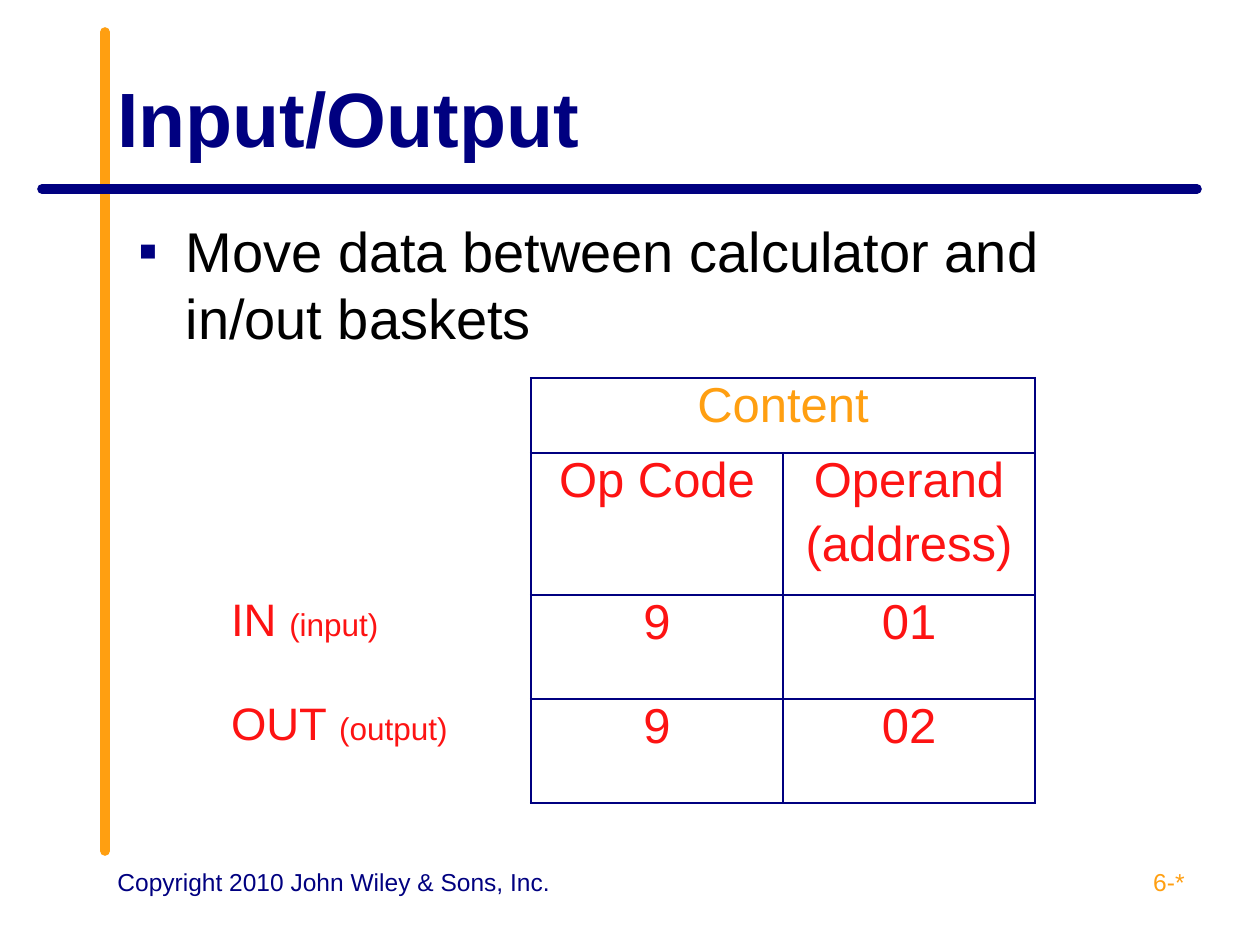
from lxml import etree
from pptx import Presentation, util as u
from pptx.dml.color import RGBColor
from pptx.enum import shapes, text
from pptx.oxml import ns

PX = 914400 / 126
NAVY = RGBColor(0x00, 0x00, 0x80)
ORANGE = RGBColor(0xFF, 0x9F, 0x11)
RED = RGBColor(0xFD, 0x13, 0x13)
BLACK = RGBColor(0x00, 0x00, 0x00)
WHITE = RGBColor(0xFF, 0xFF, 0xFF)
FONT = "Arial"


def emu(px):
    return u.Emu(round(px * PX))


def place(shape, box):
    shape.left, shape.top, shape.width, shape.height = map(emu, box)


def style(run, size, color, bold=False):
    run.font.name = FONT
    run.font.size = u.Pt(size)
    run.font.color.rgb = color
    run.font.bold = bold


def add_rule(slide, start, end, color):
    rule = slide.shapes.add_connector(
        shapes.MSO_CONNECTOR.STRAIGHT, *map(emu, start + end))
    rule.line.color.rgb = color
    rule.line.width = u.Pt(5.5)
    rule.line._get_or_add_ln().set("cap", "rnd")
    etree.SubElement(rule._element.spPr, ns.qn("a:effectLst"))


def add_footer(slide, box, wording, color, align):
    footer = slide.shapes.add_textbox(*map(emu, box))
    footer.text_frame.word_wrap = True
    footer.text_frame.text = wording
    paragraph = footer.text_frame.paragraphs[0]
    paragraph.alignment = align
    style(paragraph.runs[0], 14, color)


def fill_title(title, box, wording):
    place(title, box)
    frame = title.text_frame
    frame.text = wording
    frame.vertical_anchor = text.MSO_ANCHOR.MIDDLE
    frame.auto_size = text.MSO_AUTO_SIZE.NONE
    frame.paragraphs[0].alignment = text.PP_ALIGN.LEFT
    style(frame.paragraphs[0].runs[0], 44, NAVY, bold=True)


def fill_body(body, box, wording):
    place(body, box)
    frame = body.text_frame
    frame.text = wording
    frame.auto_size = text.MSO_AUTO_SIZE.NONE
    paragraph = frame.paragraphs[0]
    paragraph.space_before = u.Pt(0)
    props = paragraph._p.get_or_add_pPr()
    props.set("marL", str(emu(47)))
    props.set("indent", str(-emu(47)))
    bullet_color = etree.SubElement(props, ns.qn("a:buClr"))
    etree.SubElement(bullet_color, ns.qn("a:srgbClr"), val=str(NAVY))
    etree.SubElement(props, ns.qn("a:buFont"), typeface=FONT)
    etree.SubElement(props, ns.qn("a:buChar"), char="▪")
    style(paragraph.runs[0], 32, BLACK)


def set_borders(cell, colors):
    """Draw the left, right, top and bottom borders in the given colours."""
    props = cell._tc.get_or_add_tcPr()
    for index, (side, color) in enumerate(zip("LRTB", colors)):
        width = u.Pt(1.5 if color == NAVY else 1)
        line = etree.Element(ns.qn("a:ln" + side), w=str(width))
        fill = etree.SubElement(line, ns.qn("a:solidFill"))
        etree.SubElement(fill, ns.qn("a:srgbClr"), val=str(color))
        props.insert(index, line)


def write_cell(cell, lines, align):
    """Write one paragraph per line, each a list of (wording, size, colour)."""
    frame = cell.text_frame
    for index, parts in enumerate(lines):
        paragraph = frame.add_paragraph() if index else frame.paragraphs[0]
        paragraph.alignment = align
        if index:
            paragraph.space_before = u.Pt(5.6)
        for wording, size, color in parts:
            run = paragraph.add_run()
            run.text = wording
            style(run, size, color)


def add_instruction_table(slide, left, top):
    columns, rows = (252, 48, 252, 252), (75, 142, 104, 104)
    frame = slide.shapes.add_table(
        len(rows), len(columns),
        *map(emu, (left, top, sum(columns), sum(rows))))
    table = frame.table
    table.first_row = table.horz_banding = False
    for column, width in zip(table.columns, columns):
        column.width = emu(width)
    for row, height in zip(table.rows, rows):
        row.height = emu(height)

    borders = ([WHITE] * 4, [WHITE, NAVY, WHITE, WHITE], [NAVY] * 4, [NAVY] * 4)
    for row in table.rows:
        for cell, colors in zip(row.cells, borders):
            cell.fill.background()
            cell.margin_left = cell.margin_right = 0
            cell.margin_top = cell.margin_bottom = 0
            set_borders(cell, colors)

    table.cell(0, 2).merge(table.cell(0, 3))
    center = text.PP_ALIGN.CENTER
    write_cell(table.cell(0, 2), [[("Content", 28, ORANGE)]], center)
    headings = (["Op Code"], ["Operand", "(address)"])
    for column, heading in enumerate(headings, 2):
        write_cell(table.cell(1, column),
                   [[(line, 28, RED)] for line in heading], center)

    instructions = (("IN ", "(input)", "9", "01"), ("OUT ", "(output)", "9", "02"))
    for row, (mnemonic, meaning, *codes) in enumerate(instructions, 2):
        write_cell(table.cell(row, 0),
                   [[(mnemonic, 26, RED), (meaning, 18, RED)]],
                   text.PP_ALIGN.LEFT)
        for column, code in enumerate(codes, 2):
            write_cell(table.cell(row, column), [[(code, 28, RED)]], center)


def main():
    deck = Presentation()
    deck.slide_width, deck.slide_height = emu(1260), emu(945)
    slide = deck.slides.add_slide(deck.slide_layouts[1])

    add_rule(slide, (105, 851), (105, 32), ORANGE)
    add_rule(slide, (1197, 189), (42, 189), NAVY)
    add_footer(slide, (105, 861, 462, 65),
               "Copyright 2010 John Wiley & Sons, Inc.", NAVY, text.PP_ALIGN.LEFT)
    add_footer(slide, (903, 861, 294, 65), "6-*", ORANGE, text.PP_ALIGN.RIGHT)
    fill_title(slide.shapes.title, (105, 38, 1092, 158), "Input/Output")
    fill_body(slide.placeholders[1], (126, 210, 1071, 624),
              "Move data between calculator and in/out baskets")
    add_instruction_table(slide, 231, 378)
    deck.save("out.pptx")


if __name__ == "__main__":
    main()
